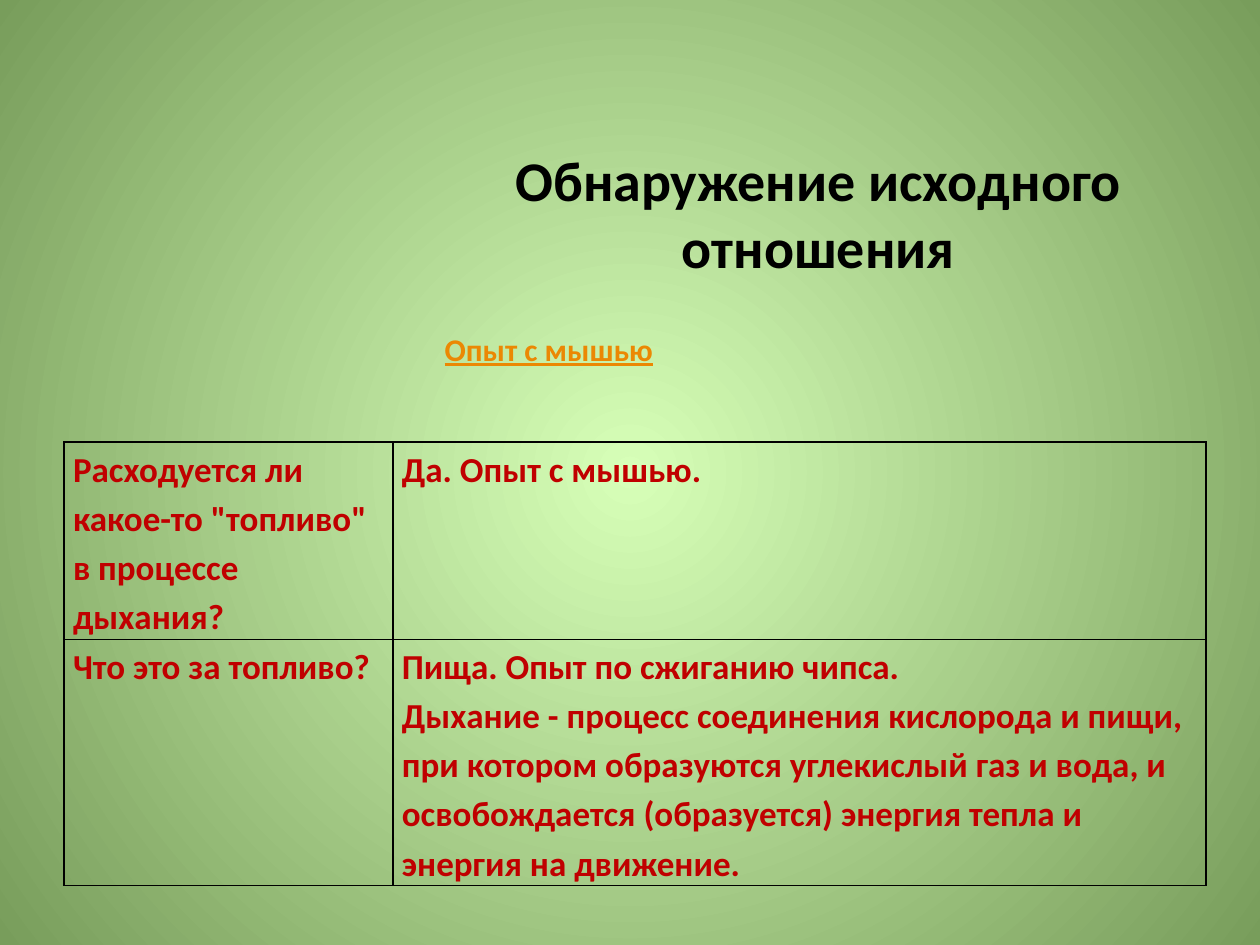
from lxml.etree import SubElement
from pptx import Presentation
from pptx.dml.color import RGBColor
from pptx.enum.text import MSO_ANCHOR, PP_ALIGN
from pptx.oxml.ns import qn
from pptx.util import Inches, Pt

BLACK = RGBColor(0x00, 0x00, 0x00)
RED = RGBColor(0xC0, 0x00, 0x00)
ORANGE = RGBColor(0xEB, 0x88, 0x03)
LIGHT_GREEN = RGBColor(0xD7, 0xFF, 0xB8)
DARK_GREEN = RGBColor(0x78, 0x9D, 0x5B)

BASE = {"name": "Calibri", "bold": True}
TITLE_FONT = BASE | {"size": Pt(32), "color": BLACK}
LABEL_FONT = BASE | {"size": Pt(18), "color": ORANGE, "underline": True}
CELL_FONT = BASE | {"size": Pt(20), "color": RED}

TEXTS = [
    ("Обнаружение исходного отношения", (3.74, 0.44, 5.51, 2.49),
     TITLE_FONT, MSO_ANCHOR.MIDDLE, PP_ALIGN.CENTER),
    ("Опыт с мышью", (3.43, 2.57, 1.97, 0.4),
     LABEL_FONT, MSO_ANCHOR.TOP, PP_ALIGN.LEFT),
]
ROWS = [
    (['Расходуется ли какое-то "топливо" в процессе дыхания?'],
     ["Да. Опыт с мышью."]),
    (["Что это за топливо?"],
     ["Пища. Опыт по сжиганию чипса.",
      "Дыхание - процесс соединения кислорода и пищи, при котором образуются "
      "углекислый газ и вода, и освобождается (образуется) энергия тепла и "
      "энергия на движение."]),
]
TABLE_LEFT, TABLE_TOP = 0.51, 3.51
COL_WIDTHS = (2.61, 6.45)
ROW_HEIGHTS = (1.56, 1.95)
CELL_MARGINS = {"margin_left": Inches(0.07), "margin_right": Inches(0.07),
                "margin_top": 0, "margin_bottom": 0}


def add_run(p, text, fmt):
    r = p.add_run()
    r.text = text
    for key, value in fmt.items():
        if key == "color":
            r.font.color.rgb = value
        else:
            setattr(r.font, key, value)


def set_background(s):
    fill = s.background.fill
    fill.gradient()
    for stop, pos, color in zip(fill.gradient_stops, (0, 1), (LIGHT_GREEN, DARK_GREEN)):
        stop.position = pos
        stop.color.rgb = color
    grad = s.element.find(".//" + qn("a:gradFill"))
    grad.remove(grad.find(qn("a:lin")))
    circle = SubElement(grad, qn("a:path"), {"path": "circle"})
    SubElement(circle, qn("a:fillToRect"), dict.fromkeys("ltrb", "50000"))


def add_text(s, text, box, fmt, anchor, align):
    tf = s.shapes.add_textbox(*map(Inches, box)).text_frame
    tf.word_wrap = True
    tf.vertical_anchor = anchor
    p = tf.paragraphs[0]
    p.alignment = align
    add_run(p, text, fmt)


def add_borders(cell):
    tc_pr = cell._tc.get_or_add_tcPr()
    for side in "LRTB":
        ln = SubElement(tc_pr, qn(f"a:ln{side}"), {"w": str(Pt(1))})
        SubElement(SubElement(ln, qn("a:solidFill")), qn("a:srgbClr"), {"val": str(BLACK)})


def fill_cell(cell, lines):
    add_borders(cell)
    cell.fill.background()
    for key, value in CELL_MARGINS.items():
        setattr(cell, key, value)
    tf = cell.text_frame
    for i, line in enumerate(lines):
        p = tf.add_paragraph() if i else tf.paragraphs[0]
        p.line_spacing = 1.15
        add_run(p, line, CELL_FONT)


def add_answers(s):
    box = (TABLE_LEFT, TABLE_TOP, sum(COL_WIDTHS), sum(ROW_HEIGHTS))
    table = s.shapes.add_table(len(ROWS), len(COL_WIDTHS), *map(Inches, box)).table
    table.first_row = table.horz_banding = False
    for col, width in zip(table.columns, COL_WIDTHS):
        col.width = Inches(width)
    for row, height, texts in zip(table.rows, ROW_HEIGHTS, ROWS):
        row.height = Inches(height)
        for cell, lines in zip(row.cells, texts):
            fill_cell(cell, lines)


def main():
    prs = Presentation()
    prs.slide_width, prs.slide_height = Inches(10), Inches(7.5)
    s = prs.slides.add_slide(prs.slide_layouts[6])
    set_background(s)
    add_answers(s)
    for item in TEXTS:
        add_text(s, *item)
    prs.save("out.pptx")


if __name__ == "__main__":
    main()
